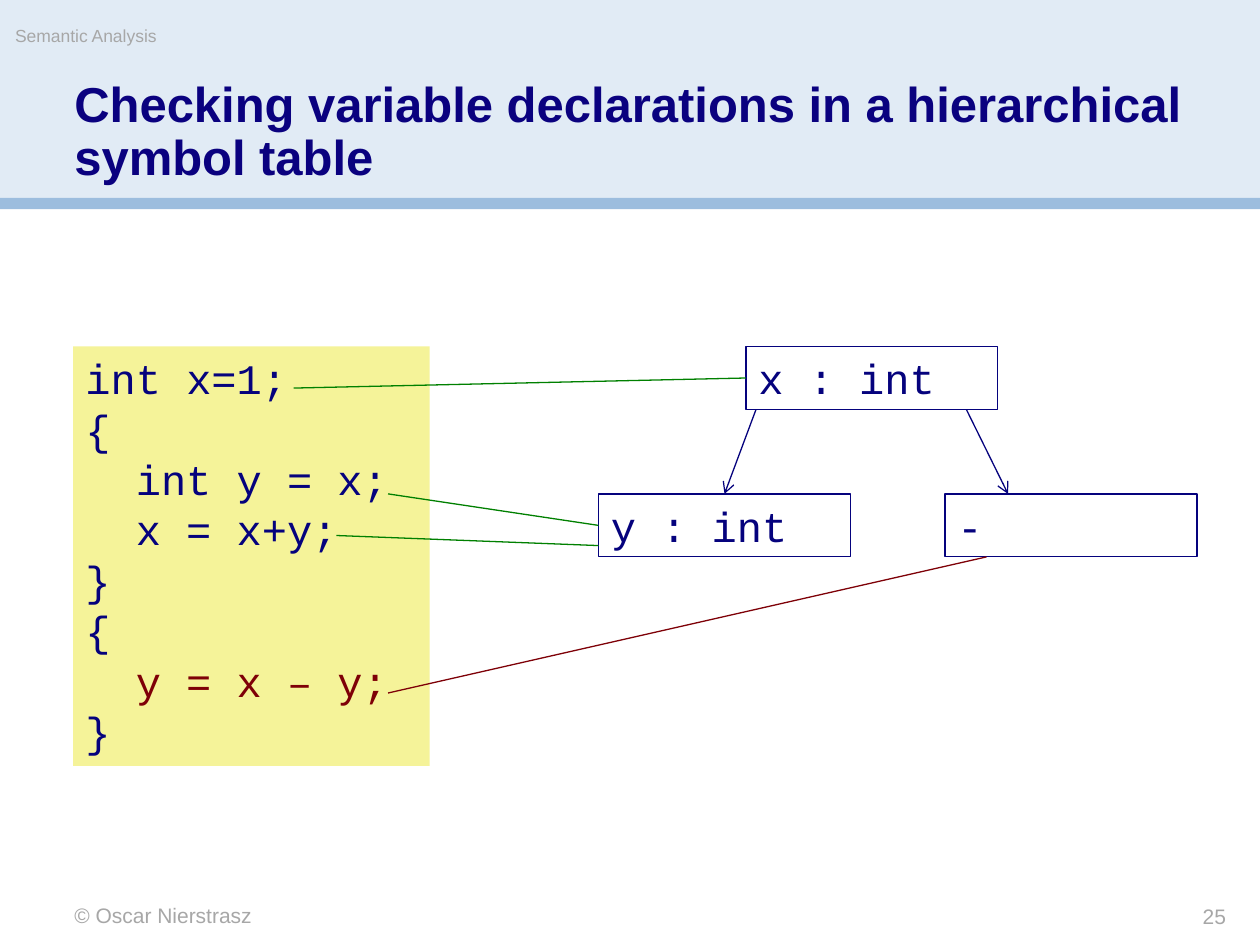
from lxml import etree
from pptx import Presentation
from pptx.dml.color import RGBColor
from pptx.enum.shapes import MSO_CONNECTOR, MSO_SHAPE
from pptx.enum.text import MSO_ANCHOR, PP_ALIGN
from pptx.oxml.ns import qn
from pptx.util import Inches, Pt

STRAIGHT = MSO_CONNECTOR.STRAIGHT
RECTANGLE = MSO_SHAPE.RECTANGLE
TOP, MIDDLE = MSO_ANCHOR.TOP, MSO_ANCHOR.MIDDLE
LEFT, RIGHT = PP_ALIGN.LEFT, PP_ALIGN.RIGHT
TOP_SITE, LEFT_SITE = 0, 1

PALE_BLUE = RGBColor(0xE1, 0xEB, 0xF5)
BAND_BLUE = RGBColor(0x9C, 0xBD, 0xDE)
TITLE_BLUE = RGBColor(0x0A, 0x01, 0x7F)
NAVY = RGBColor(0x05, 0x02, 0x7D)
GREY = RGBColor(0xA7, 0xA7, 0xA7)
YELLOW = RGBColor(0xF5, 0xF3, 0x99)
GREEN = RGBColor(0x00, 0x80, 0x00)
RED = RGBColor(0x7E, 0x00, 0x07)

CODE_INDENT = 0.4
CODE_LINES = [
    ("int x=1;", NAVY),
    ("{", NAVY),
    ("\tint y = x;", NAVY),
    ("\tx = x+y;", NAVY),
    ("}", NAVY),
    ("{", NAVY),
    ("\ty = x – y;", RED),
    ("}", NAVY),
]


def write_text(para, text, *, size, color, font="Arial", bold=False, align=LEFT):
    para.alignment = align
    span = para.add_run()
    span.text = text
    span.font.name = font
    span.font.size = Pt(size)
    span.font.bold = bold
    span.font.color.rgb = color


def set_frame(frame, margins=(0, 0), anchor=TOP):
    frame.word_wrap = True
    frame.vertical_anchor = anchor
    frame.margin_left = frame.margin_right = Inches(margins[0])
    frame.margin_top = frame.margin_bottom = Inches(margins[1])


class SlideBuilder:
    code_font = "Courier New"
    code_size = 24
    line_width = Pt(0.75)

    def __init__(self, page):
        self.page = page
        self.shapes = page.shapes

    def title(self, text, area):
        box = self.shapes.title
        box.left, box.top, box.width, box.height = map(Inches, area)
        set_frame(box.text_frame, anchor=MIDDLE)
        para = box.text_frame.paragraphs[0]
        para.line_spacing = 0.9
        write_text(para, text, size=28, color=TITLE_BLUE, bold=True)
        self.shapes._spTree.append(box._element)

    def label(self, text, area, size, align=LEFT):
        box = self.shapes.add_textbox(*map(Inches, area))
        set_frame(box.text_frame)
        write_text(box.text_frame.paragraphs[0], text, size=size, color=GREY, align=align)

    def rectangle(self, area, fill=None, line=None):
        box = self.shapes.add_shape(RECTANGLE, *map(Inches, area))
        box.shadow.inherit = False
        if fill is None:
            box.fill.background()
        else:
            box.fill.solid()
            box.fill.fore_color.rgb = fill
        if line is None:
            box.line.fill.background()
        else:
            box.line.color.rgb = line
            box.line.width = self.line_width
        return box

    def code(self, lines, area, fill=None, line=None):
        box = self.rectangle(area, fill, line)
        frame = box.text_frame
        set_frame(frame, margins=(0.1, 0.05))
        for index, (text, color) in enumerate(lines):
            para = frame.add_paragraph() if index else frame.paragraphs[0]
            write_text(para, text, size=self.code_size, color=color, font=self.code_font)
            if text.startswith("\t"):
                tabs = etree.SubElement(para._p.get_or_add_pPr(), qn("a:tabLst"))
                etree.SubElement(tabs, qn("a:tab"), pos=str(Inches(CODE_INDENT)), algn="l")
        return box

    def scope(self, text, left, top):
        return self.code([(text, NAVY)], (left, top, 2, 0.5), line=NAVY)

    def link(self, start, end, color, arrow=False, target=None):
        line = self.shapes.add_connector(STRAIGHT, *map(Inches, start + end))
        line.line.color.rgb = color
        line.line.width = self.line_width
        if arrow:
            etree.SubElement(line.line._get_or_add_ln(), qn("a:tailEnd"), type="arrow")
        etree.SubElement(line._element.spPr, qn("a:effectLst"))
        if target:
            line.end_connect(*target)


def main():
    deck = Presentation()
    deck.slide_width, deck.slide_height = Inches(10), Inches(7.5)
    slide = SlideBuilder(deck.slides.add_slide(deck.slide_layouts[5]))

    slide.rectangle((0, 0, 10, 1.58), PALE_BLUE)
    slide.rectangle((0, 1.57, 10, 0.09), BAND_BLUE)
    slide.title(
        "Checking variable declarations in a hierarchical symbol table",
        (0.59, 0.61, 8.83, 0.89),
    )
    slide.label("© Oscar Nierstrasz", (0.59, 7.16, 4.17, 0.2), 12)
    slide.label("Semantic Analysis", (0.12, 0.2, 5.9, 0.28), 10)
    slide.label("25", (8.25, 7.17, 1.48, 0.2), 12, RIGHT)

    slide.code(CODE_LINES, (0.58, 2.75, 2.83, 3.33), fill=YELLOW)
    outer = slide.scope("x : int", 5.92, 2.75)
    inner = slide.scope("y : int", 4.75, 3.92)
    slide.scope("-", 7.5, 3.92)

    slide.link((6, 3.25), (5.75, 3.92), NAVY, arrow=True, target=(inner, TOP_SITE))
    slide.link((7.67, 3.25), (8, 3.92), NAVY, arrow=True)
    slide.link((2.33, 3.08), (5.92, 3), GREEN, target=(outer, LEFT_SITE))
    slide.link((3.08, 3.92), (4.75, 4.17), GREEN, target=(inner, LEFT_SITE))
    slide.link((3.08, 5.5), (7.83, 4.42), RED)
    slide.link((2.67, 4.25), (4.75, 4.33), GREEN)

    deck.save("out.pptx")


if __name__ == "__main__":
    main()
